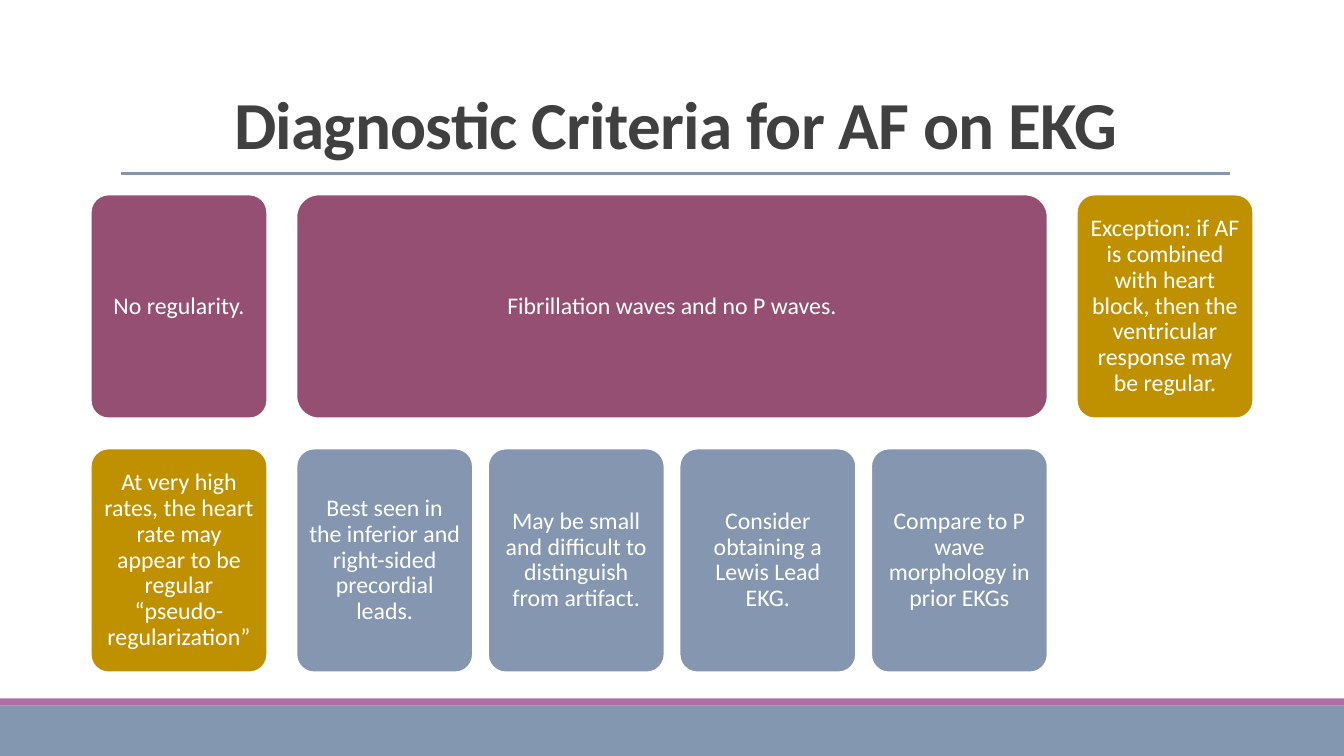
from dataclasses import dataclass

from lxml.etree import SubElement
from pptx import Presentation
from pptx.dml.color import RGBColor
from pptx.enum.shapes import MSO_CONNECTOR, MSO_SHAPE
from pptx.enum.text import MSO_ANCHOR, MSO_AUTO_SIZE, PP_ALIGN
from pptx.oxml.ns import qn
from pptx.util import Inches, Pt


@dataclass(frozen=True)
class Theme:
    font: str = "Calibri"
    title_size: int = 48
    card_size: int = 17
    title: str = "404040"
    white: str = "FFFFFF"
    plum: str = "954F72"
    gold: str = "BF9000"
    slate: str = "8496B0"
    footer: str = "8497B0"
    stripe: str = "B06EA7"


THEME = Theme()
SLIDE_WIDTH, SLIDE_HEIGHT = 13.33, 7.5
CARD_WIDTH, CARD_HEIGHT = 1.75, 2.22
CARD_GAP, GROUP_GAP, ROW_GAP = 0.15, 0.29, 0.3

# Each group: heading, heading colour, child cards, child colour
CRITERIA = [
    ("No regularity.", THEME.plum,
     ["At very high rates, the heart rate may appear to be regular “pseudo-regularization”"],
     THEME.gold),
    ("Fibrillation waves and no P waves.", THEME.plum,
     ["Best seen in the inferior and right-sided precordial leads.",
      "May be small and difficult to distinguish from artifact.",
      "Consider obtaining a Lewis Lead EKG.",
      "Compare to P wave morphology in prior EKGs"],
     THEME.slate),
    ("Exception: if AF is combined with heart block, then the ventricular response may be regular.",
     THEME.gold, [], THEME.slate),
]


def style_paragraph(para, size, color, line_spacing, bold=False):
    para.alignment = PP_ALIGN.CENTER
    para.line_spacing = line_spacing
    para.font.name = THEME.font
    para.font.size = Pt(size)
    para.font.bold = bold
    para.font.color.rgb = RGBColor.from_string(color)


def add_filled(page, kind, box, color):
    shape = page.shapes.add_shape(kind, *map(Inches, box))
    shape.shadow.inherit = False
    shape.fill.solid()
    shape.fill.fore_color.rgb = RGBColor.from_string(color)
    shape.line.fill.background()
    return shape


def add_footer(page, left, top, width, height):
    """Draw the bottom band with a thin stripe along its upper edge."""
    stripe = 0.07
    add_filled(page, MSO_SHAPE.RECTANGLE, (left, top + stripe, width, height - stripe), THEME.footer)
    add_filled(page, MSO_SHAPE.RECTANGLE, (left, top, width, stripe), THEME.stripe)


def add_title(page, left, top, width, height):
    """Fill the title placeholder and rule a line just below it."""
    title = page.shapes.title
    title.left, title.top, title.width, title.height = map(Inches, (left, top, width, height))
    frame = title.text_frame
    frame.text = "Diagnostic Criteria for AF on EKG"
    frame.auto_size = MSO_AUTO_SIZE.NONE
    frame.vertical_anchor = MSO_ANCHOR.BOTTOM
    para = frame.paragraphs[0]
    style_paragraph(para, THEME.title_size, THEME.title, 0.85, bold=True)
    para.runs[0]._r.get_or_add_rPr().set("spc", "-50")

    rule_top = Inches(top + height + 0.05)
    rule = page.shapes.add_connector(
        MSO_CONNECTOR.STRAIGHT, Inches(left), rule_top, Inches(left + width), rule_top)
    rule.line.color.rgb = RGBColor.from_string(THEME.slate)
    rule.line.width = Pt(2.25)
    SubElement(rule._element.spPr, qn("a:effectLst"))


def add_card(page, box, text, color):
    card = add_filled(page, MSO_SHAPE.ROUNDED_RECTANGLE, box, color)
    card.adjustments[0] = 0.1
    card.line.color.rgb = RGBColor.from_string(THEME.white)
    card.line.width = Pt(1.25)
    frame = card.text_frame
    frame.text = text
    frame.word_wrap = True
    frame.vertical_anchor = MSO_ANCHOR.MIDDLE
    frame.margin_left = frame.margin_right = Inches(0.07)
    frame.margin_top = frame.margin_bottom = Inches(0.07)
    style_paragraph(frame.paragraphs[0], THEME.card_size, THEME.white, 0.9)


def add_criteria(page, left, top):
    """Place each heading card across the full width of its child cards."""
    step = CARD_WIDTH + CARD_GAP
    child_top = top + CARD_HEIGHT + ROW_GAP
    for heading, heading_color, children, child_color in CRITERIA:
        width = max(len(children), 1) * step - CARD_GAP
        add_card(page, (left, top, width, CARD_HEIGHT), heading, heading_color)
        for index, text in enumerate(children):
            box = (left + index * step, child_top, CARD_WIDTH, CARD_HEIGHT)
            add_card(page, box, text, child_color)
        left += width + GROUP_GAP


def main():
    deck = Presentation()
    deck.slide_width = Inches(SLIDE_WIDTH)
    deck.slide_height = Inches(SLIDE_HEIGHT)
    page = deck.slides.add_slide(deck.slide_layouts.get_by_name("Title Only"))
    add_footer(page, 0, 6.93, SLIDE_WIDTH, 0.57)
    add_title(page, 1.2, 0.31, 11, 1.36)
    add_criteria(page, 0.9, 1.93)
    deck.save("out.pptx")


if __name__ == "__main__":
    main()
